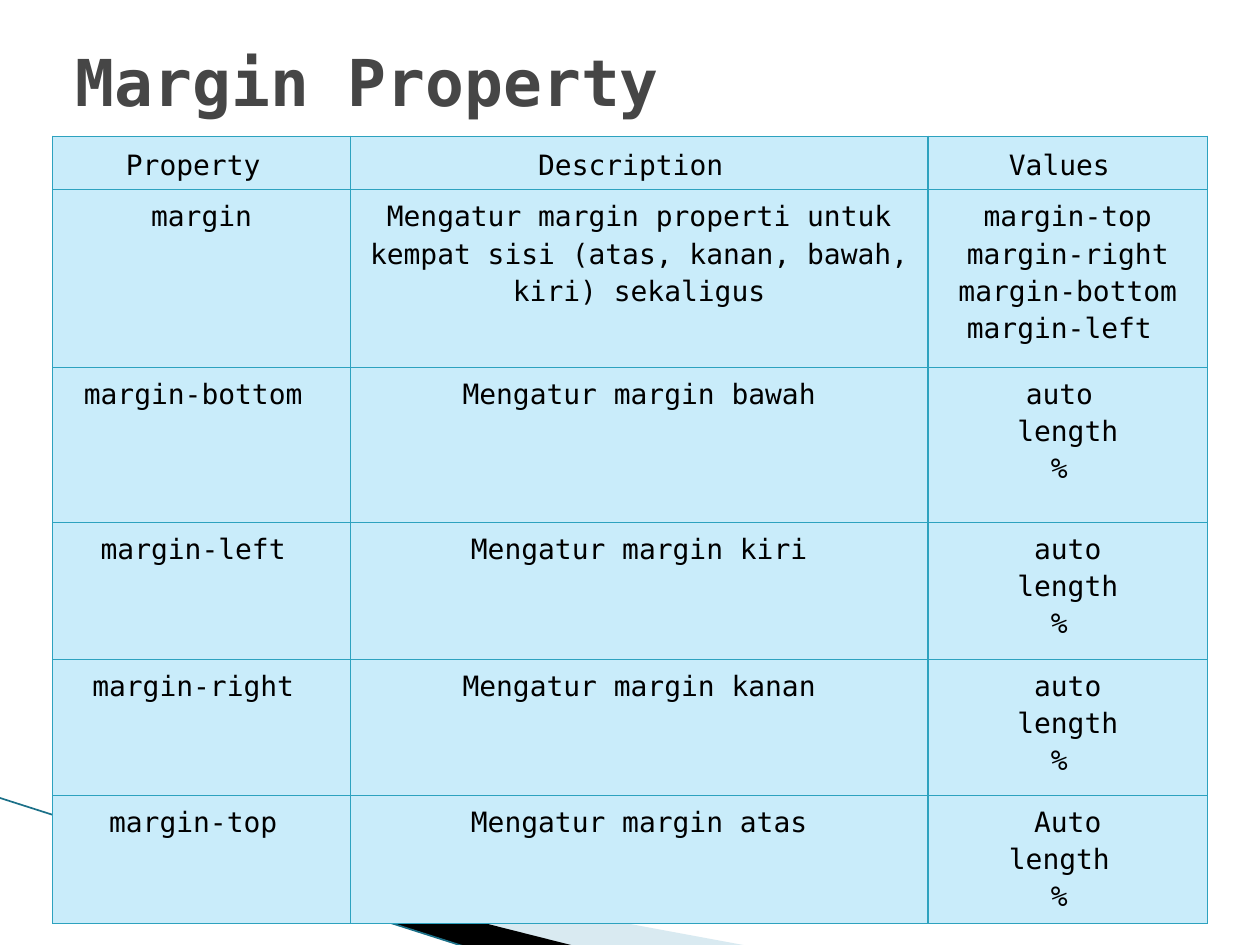
from dataclasses import dataclass

import lxml.etree
import pptx
import pptx.dml.color
import pptx.enum.shapes
import pptx.enum.text
import pptx.oxml
import pptx.oxml.ns
import pptx.util


@dataclass(frozen=True)
class Theme:
    font: str = "DejaVu Sans Mono"
    title_size: float = 36.9
    body_size: float = 16
    border_width: float = 0.75
    line_width: float = 0.95
    line_spacing: float = 1.15
    space_after: float = 10
    title: str = "464646"
    body: str = "000000"
    cell: str = "C9ECFA"
    border: str = "2DA2BF"
    pale_wedge: str = "A0CBDC"
    dark_wedge: str = "000000"
    edge: str = "1B7088"


THEME = Theme()
WIDTH = pptx.util.Inches(10)
HEIGHT = pptx.util.Inches(7.5)
COLUMNS = (23.6, 45.85, 22.2)
ROWS = (5.7, 18.8, 16.4, 14.47, 14.4, 13.55)
CELLS = (
    ("Property ", "Description ", "Values "),
    ("margin",
     "Mengatur margin properti untuk kempat sisi (atas, kanan, bawah, kiri) sekaligus",
     "margin-top\vmargin-right\vmargin-bottom\vmargin-left "),
    ("margin-bottom ", "Mengatur margin bawah", "auto \nlength\v% "),
    ("margin-left ", "Mengatur margin kiri", "auto\vlength\v% "),
    ("margin-right ", "Mengatur margin kanan", "auto\vlength\v% "),
    ("margin-top ", "Mengatur margin atas", "Auto\nlength \n% "),
)


def across(percent):
    return round(WIDTH * percent / 100)


def down(percent):
    return round(HEIGHT * percent / 100)


def rgb(value):
    return pptx.dml.color.RGBColor.from_string(value)


def set_font(font, size, color, bold=False):
    font.name = THEME.font
    font.size = pptx.util.Pt(size)
    font.bold = bold
    font.color.rgb = rgb(color)


def set_frame(wedge, frame):
    left, top, width, height = (
        across(frame[0]), down(frame[1]), across(frame[2]), down(frame[3]))
    outline = wedge._element.find(".//" + pptx.oxml.ns.qn("a:path"))
    outline.set("w", str(width))
    outline.set("h", str(height))
    for point in outline.iter(pptx.oxml.ns.qn("a:pt")):
        point.set("x", str(int(point.get("x")) + wedge.left - left))
        point.set("y", str(int(point.get("y")) + wedge.top - top))
    wedge.left, wedge.top, wedge.width, wedge.height = left, top, width, height


def add_wedge(page, frame, points, color, opacity=100):
    corners = [(across(x), down(y)) for x, y in points]
    builder = page.shapes.build_freeform(*corners[0])
    builder.add_line_segments(corners[1:])
    wedge = builder.convert_to_shape()
    set_frame(wedge, frame)
    wedge.shadow.inherit = False
    wedge.line.fill.background()
    wedge.fill.solid()
    wedge.fill.fore_color.rgb = rgb(color)
    if opacity < 100:
        tint = wedge.fill._xPr.find(".//" + pptx.oxml.ns.qn("a:srgbClr"))
        alpha = lxml.etree.SubElement(tint, pptx.oxml.ns.qn("a:alpha"))
        alpha.set("val", str(opacity * 1000))


def add_edge(page, start, end):
    edge = page.shapes.add_connector(
        pptx.enum.shapes.MSO_CONNECTOR.STRAIGHT,
        across(start[0]), down(start[1]), across(end[0]), down(end[1]))
    edge.line.color.rgb = rgb(THEME.edge)
    edge.line.width = pptx.util.Pt(THEME.line_width)
    lxml.etree.SubElement(edge._element.spPr, pptx.oxml.ns.qn("a:effectLst"))


def set_title(page, text):
    title = page.shapes.title
    title.left, title.top = across(5), down(3.33)
    title.width, title.height = across(90), down(10.4)
    frame = title.text_frame
    frame.text = text
    frame.vertical_anchor = pptx.enum.text.MSO_ANCHOR.MIDDLE
    para = frame.paragraphs[0]
    para.alignment = pptx.enum.text.PP_ALIGN.LEFT
    set_font(para.font, THEME.title_size, THEME.title, True)


def set_borders(cell):
    properties = cell._tc.get_or_add_tcPr()
    for side in ("lnL", "lnR", "lnT", "lnB"):
        border = lxml.etree.SubElement(properties, pptx.oxml.ns.qn("a:" + side))
        border.set("w", str(pptx.util.Pt(THEME.border_width)))
        fill = lxml.etree.SubElement(border, pptx.oxml.ns.qn("a:solidFill"))
        color = lxml.etree.SubElement(fill, pptx.oxml.ns.qn("a:srgbClr"))
        color.set("val", THEME.border)


def fill_cell(cell, text, anchor):
    set_borders(cell)
    cell.fill.solid()
    cell.fill.fore_color.rgb = rgb(THEME.cell)
    cell.vertical_anchor = anchor
    cell.text_frame.text = text
    paragraphs = cell.text_frame.paragraphs
    for para in paragraphs:
        para.alignment = pptx.enum.text.PP_ALIGN.CENTER
        para.line_spacing = THEME.line_spacing
        para.space_after = pptx.util.Pt(THEME.space_after if len(paragraphs) == 1 else 0)
        set_font(para.font, THEME.body_size, THEME.body)


def add_property_table(page):
    table = page.shapes.add_table(
        len(ROWS), len(COLUMNS), across(4.2), down(14.4),
        across(sum(COLUMNS)), down(sum(ROWS))).table
    for column, width in zip(table.columns, COLUMNS):
        column.width = across(width)
    anchors = pptx.enum.text.MSO_ANCHOR
    for index, (row, height, texts) in enumerate(zip(table.rows, ROWS, CELLS)):
        row.height = down(height)
        anchor = anchors.TOP if index else anchors.MIDDLE
        for cell, text in zip(row.cells, texts):
            fill_cell(cell, text, anchor)


def main():
    deck = pptx.Presentation()
    deck.slide_width, deck.slide_height = WIDTH, HEIGHT
    page = deck.slides.add_slide(deck.slide_layouts[5])
    add_wedge(page, (7.8, 72.93, 41.6, 21.07),
              ((5.5, 86.8), (59.5, 100.13), (45.6, 100.13), (5.5, 86.67)),
              THEME.pale_wedge, 40)
    add_wedge(page, (-0.6, 84.4, 41.6, 12.27),
              ((5.3, 86.53), (45.7, 100.13), (37.2, 100.27), (5.4, 86.67)),
              THEME.dark_wedge)
    add_edge(page, (-0.1, 84.4), (37.1, 100.27))
    set_title(page, "Margin Property")
    add_property_table(page)
    deck.save("out.pptx")


if __name__ == "__main__":
    main()
